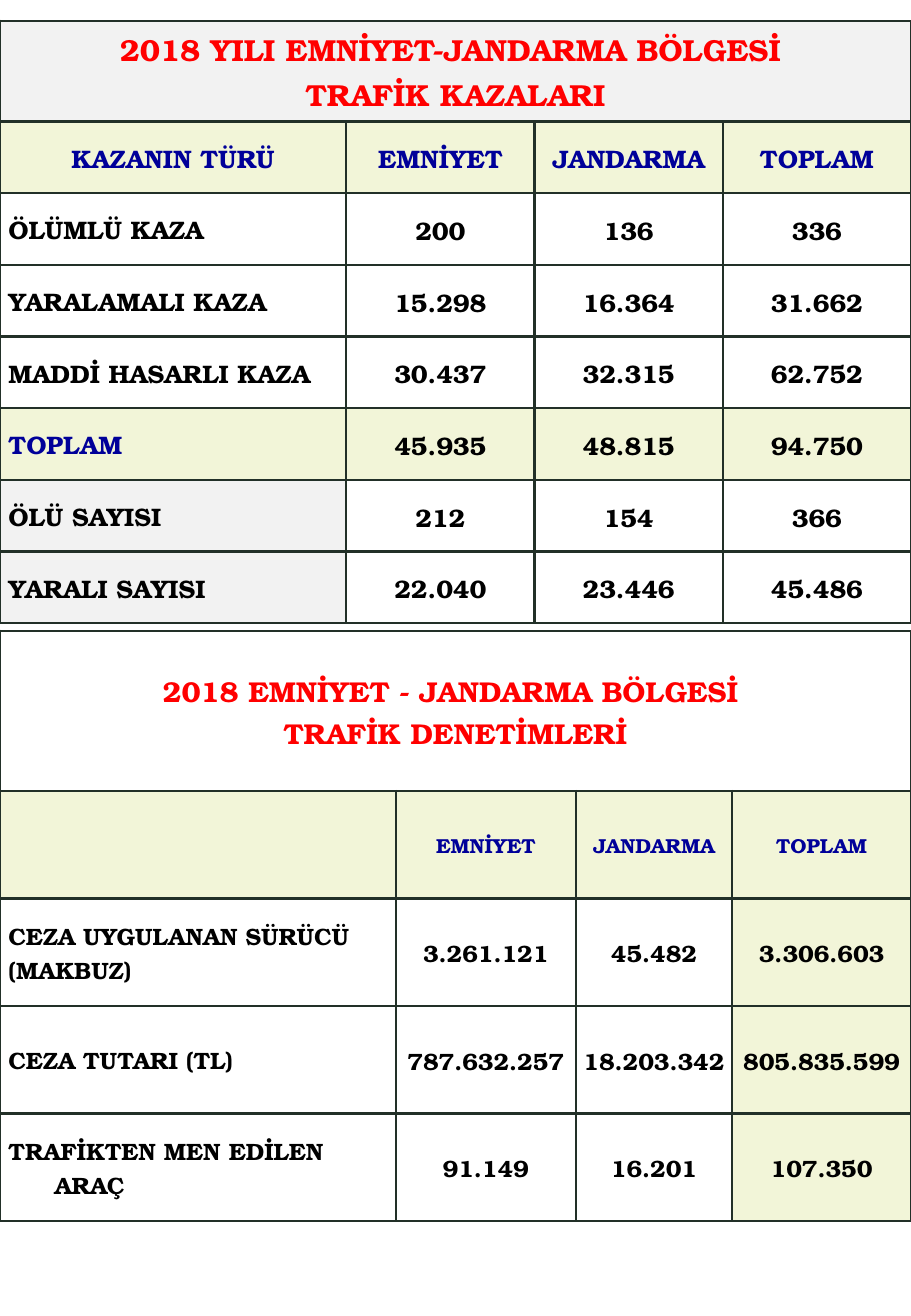
from dataclasses import dataclass

from lxml import etree
from pptx import Presentation
from pptx import util as u
from pptx.dml.color import RGBColor
from pptx.enum import text
from pptx.oxml import ns


@dataclass(frozen=True)
class Theme:
    font: str = "TeX Gyre Bonum"
    red: str = "FF0000"
    navy: str = "000099"
    black: str = "000000"
    white: str = "FFFFFF"
    gray: str = "F2F2F2"
    cream: str = "F2F5D8"
    line: str = "223028"
    border: float = 1.5
    indent: float = 0.38


@dataclass(frozen=True)
class Sizes:
    title: int
    head: int
    body: int


@dataclass(frozen=True)
class Look:
    size: int
    color: str
    fill: str
    left: bool = False
    tight: bool = False
    hang: bool = True


@dataclass(frozen=True)
class Row:
    label: str
    values: tuple[str, str, str]
    fills: tuple[str, str, str, str]
    color: str = "000000"
    hang: bool = True


@dataclass(frozen=True)
class Panel:
    top: float
    cols: tuple[float, ...]
    heights: tuple[float, float]  # title row, every other row
    sizes: Sizes
    title: str
    fill: str
    corner: str
    rows: tuple[Row, ...]


T = Theme()
HEADS = ("EMNİYET", "JANDARMA", "TOPLAM")

# Row fills: label first, then the three values
PLAIN = (T.white,) * 4
TOTAL = (T.cream,) * 4
COUNT = (T.gray,) + (T.white,) * 3
CHECK = (T.white,) * 3 + (T.cream,)

PANELS = (
    # Accidents
    Panel(0.17, (2.85, 1.55, 1.55, 1.55), (0.83, 0.59), Sizes(18, 15, 15),
          "2018 YILI EMNİYET-JANDARMA BÖLGESİ \nTRAFİK KAZALARI",
          T.gray, "KAZANIN TÜRÜ", (
              Row("ÖLÜMLÜ KAZA", ("200", "136", "336"), PLAIN),
              Row("YARALAMALI KAZA", ("15.298", "16.364", "31.662"), PLAIN),
              Row("MADDİ HASARLI KAZA", ("30.437", "32.315", "62.752"), PLAIN),
              Row("TOPLAM", ("45.935", "48.815", "94.750"), TOTAL, T.navy, False),
              Row("ÖLÜ SAYISI", ("212", "154", "366"), COUNT),
              Row("YARALI SAYISI", ("22.040", "23.446", "45.486"), COUNT),
          )),
    # Inspections
    Panel(5.19, (3.26, 1.48, 1.29, 1.47), (1.32, 0.885), Sizes(17, 12, 14),
          "2018 EMNİYET - JANDARMA BÖLGESİ \nTRAFİK DENETİMLERİ",
          T.white, "", (
              Row("CEZA UYGULANAN SÜRÜCÜ\n(MAKBUZ)",
                  ("3.261.121", "45.482", "3.306.603"), CHECK),
              Row("CEZA TUTARI (TL)",
                  ("787.632.257", "18.203.342", "805.835.599"), CHECK),
              Row("TRAFİKTEN MEN EDİLEN ARAÇ",
                  ("91.149", "16.201", "107.350"), CHECK),
          )),
)


def edge(cell) -> None:
    """Give a cell its four borders."""
    props = cell._tc.get_or_add_tcPr()
    for side in ("lnL", "lnR", "lnT", "lnB"):
        line = etree.SubElement(props, ns.qn(f"a:{side}"), w=str(u.Pt(T.border)))
        solid = etree.SubElement(line, ns.qn("a:solidFill"))
        etree.SubElement(solid, ns.qn("a:srgbClr"), val=T.line)


def write(cell, words: str, look: Look) -> None:
    """Fill a cell and set its text, one paragraph per line."""
    cell.fill.solid()
    cell.fill.fore_color.rgb = RGBColor.from_string(look.fill)
    cell.vertical_anchor = text.MSO_ANCHOR.MIDDLE
    side, top, base = (0.01, 0.01, 0) if look.tight else (0.07, 0.04, 0.04)
    cell.margin_left = cell.margin_right = u.Inches(side)
    cell.margin_top, cell.margin_bottom = u.Inches(top), u.Inches(base)
    if not words:
        return
    for i, part in enumerate(words.split("\n")):
        frame = cell.text_frame
        para = frame.add_paragraph() if i else frame.paragraphs[0]
        para.alignment = text.PP_ALIGN.LEFT if look.left else text.PP_ALIGN.CENTER
        if look.hang:
            props = para._p.get_or_add_pPr()
            props.set("marL", str(u.Inches(T.indent)))
            props.set("indent", str(-u.Inches(T.indent)))
        run = para.add_run()
        run.text = part
        run.font.name, run.font.size, run.font.bold = T.font, u.Pt(look.size), True
        run.font.color.rgb = RGBColor.from_string(look.color)


def draw(slide, panel: Panel) -> None:
    """Draw one table: title row, header row, data rows."""
    first, step = panel.heights
    count = len(panel.rows) + 2
    table = slide.shapes.add_table(
        count, len(panel.cols), 0, u.Inches(panel.top),
        u.Inches(sum(panel.cols)), u.Inches(first + step * (count - 1))).table
    table.first_row = table.horz_banding = False
    for col, width in zip(table.columns, panel.cols):
        col.width = u.Inches(width)
    for i, row in enumerate(table.rows):
        row.height = u.Inches(step if i else first)
    for cell in table.iter_cells():
        edge(cell)

    # Title and header
    sizes = panel.sizes
    table.cell(0, 0).merge(table.cell(0, len(panel.cols) - 1))
    write(table.cell(0, 0), panel.title, Look(sizes.title, T.red, panel.fill))
    for c, head in enumerate((panel.corner, *HEADS)):
        write(table.cell(1, c), head, Look(sizes.head, T.navy, T.cream))

    # Data
    for r, row in enumerate(panel.rows, 2):
        write(table.cell(r, 0), row.label,
              Look(sizes.body, row.color, row.fills[0], left=True, hang=row.hang))
        for c, value in enumerate(row.values, 1):
            write(table.cell(r, c), value,
                  Look(sizes.body, T.black, row.fills[c], tight=True))


def main() -> None:
    deck = Presentation()
    deck.slide_width, deck.slide_height = u.Inches(7.5), u.Inches(10.83)
    slide = deck.slides.add_slide(deck.slide_layouts[6])
    for panel in PANELS:
        draw(slide, panel)
    deck.save("out.pptx")


if __name__ == "__main__":
    main()
